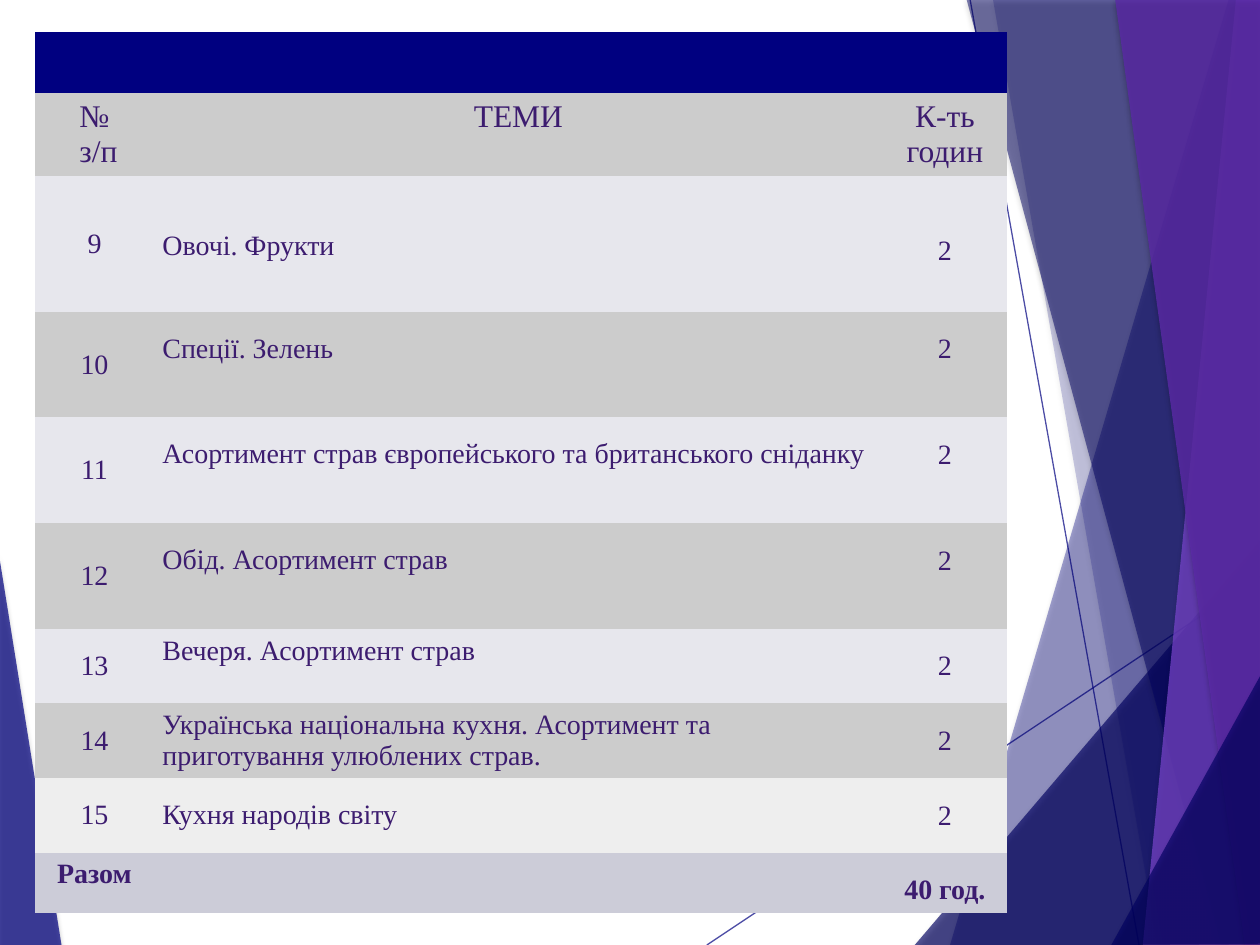
from lxml.etree import SubElement
from pptx import Presentation
from pptx.dml.color import RGBColor
from pptx.enum.shapes import MSO_CONNECTOR as Connector
from pptx.enum.text import MSO_ANCHOR as Anchor, PP_ALIGN as Align
from pptx.oxml.ns import qn
from pptx.util import Inches, Pt

FONT = "Times New Roman"
TEXT, NAVY, DARK_NAVY = "3C1C6F", "000080", "000060"
GREY, PALE, LIGHT, TOTAL = "CCCCCC", "E7E7ED", "EEEEEE", "CCCCD8"
NO_GRID_STYLE = "{2D5ABB26-0587-4C30-8999-92F81FD0307C}"

COLUMNS = [0.94, 5.79, 0.98]
ROWS = [0.49, 0.65, 1.08] + [0.84] * 3 + [0.59] * 3 + [0.48]
SIDE = 0.07

# Number, topic, row colour, top inset of the topic (None centres it)
TOPICS = [
    ("9", "Овочі. Фрукти", PALE, None),
    ("10", "Спеції. Зелень", GREY, 0.17),
    ("11", "Асортимент страв європейського та британського сніданку", PALE, 0.17),
    ("12", "Обід. Асортимент страв", GREY, 0.17),
    ("13", "Вечеря. Асортимент страв", PALE, 0.05),
    ("14", "Українська національна кухня. Асортимент та приготування "
           "улюблених страв.", GREY, None),
    ("15", "Кухня народів світу", LIGHT, None),
]

# Colour, opacity in percent, corner points
LEFT_FACET = (NAVY, 70, [(-0.01, 4.39), (0.49, 7.51), (-0.01, 7.5)])
RIGHT_FACETS = [
    (NAVY, 36, [(9.75, 0), (7.54, 7.5), (10.02, 7.51), (10.01, 0.01)]),
    (NAVY, 20, [(7.88, -0.01), (9.19, 7.5), (10.01, 7.5), (10.01, -0.01)]),
    (DARK_NAVY, 66, [(7.26, 7.5), (10, 4.29), (10.01, 7.5)]),
    (DARK_NAVY, 50, [(7.67, -0.01), (9.69, 7.5), (10.01, 7.49), (10.01, -0.01)]),
    ("7B46D0", 70, [(9.81, -0.01), (9.07, 7.5), (10.01, 7.5), (10, -0.01)]),
    ("5A2AA6", 82, [(8.85, -0.01), (9.88, 7.5), (10.02, 7.5), (10, -0.01)]),
    (DARK_NAVY, 66, [(8.82, 7.5), (10.01, 5.35), (10.02, 7.49)]),
]
LINES = [((5.61, 7.5), (10.01, 4.57)), ((7.7, 0), (9.04, 7.5))]


def paint(color_format, color):
    color_format.rgb = RGBColor.from_string(color)


def set_opacity(parent, percent):
    color = next(parent.iter(qn("a:srgbClr")))
    SubElement(color, qn("a:alpha"), val=str(percent * 1000))


def add_soft_shadow(shape):
    effects = SubElement(shape._element.spPr, qn("a:effectLst"))
    shadow = SubElement(effects, qn("a:outerShdw"), blurRad=str(Pt(3)),
                        dist=str(Pt(2)), dir="5400000", rotWithShape="0")
    SubElement(shadow, qn("a:srgbClr"), val="000000")
    set_opacity(shadow, 35)


def add_facet(page, color, opacity, corners):
    points = [(Inches(x), Inches(y)) for x, y in corners]
    builder = page.shapes.build_freeform(*points[0])
    builder.add_line_segments(points[1:], close=True)
    facet = builder.convert_to_shape()
    facet.fill.solid()
    paint(facet.fill.fore_color, color)
    set_opacity(facet._element.spPr, opacity)
    facet.line.fill.background()
    add_soft_shadow(facet)


def add_line(page, start, end):
    ends = [Inches(value) for value in start + end]
    line = page.shapes.add_connector(Connector.STRAIGHT, *ends)
    line.line.width = Pt(0.75)
    paint(line.line.color, NAVY)
    set_opacity(line._element.spPr, 70)
    SubElement(line._element.spPr, qn("a:effectLst"))


def fill_row(table, row, color):
    for cell in table.rows[row].cells:
        cell.fill.solid()
        paint(cell.fill.fore_color, color)


def write_cell(cell, *lines, size=16, bold=False, align=Align.CENTER,
               anchor=Anchor.TOP, side=0.1, top=0.05, spacing=None):
    cell.vertical_anchor = anchor
    cell.margin_left = cell.margin_right = Inches(side)
    cell.margin_top = Inches(top)
    frame = cell.text_frame
    for index, text in enumerate(lines):
        para = frame.add_paragraph() if index else frame.paragraphs[0]
        para.alignment = align
        if spacing:
            para.line_spacing = spacing
        span = para.add_run()
        span.text = text
        span.font.name = FONT
        span.font.size = Pt(size)
        span.font.bold = bold
        paint(span.font.color, TEXT)


def add_grid(page):
    box = page.shapes.add_table(
        len(ROWS), len(COLUMNS), Inches(0.28), Inches(0.25),
        Inches(sum(COLUMNS)), Inches(sum(ROWS)))
    table = box.table
    table.first_row = table.horz_banding = False
    table._tbl.tblPr.find(qn("a:tableStyleId")).text = NO_GRID_STYLE
    for column, width in zip(table.columns, COLUMNS):
        column.width = Inches(width)
    for row, height in zip(table.rows, ROWS):
        row.height = Inches(height)
    return table


def add_topics_table(page):
    table = add_grid(page)

    # Banner and column headings
    fill_row(table, 0, NAVY)
    table.cell(0, 0).merge(table.cell(0, 2))
    fill_row(table, 1, GREY)
    headings = [("№", " з/п"), ("ТЕМИ",), ("К-ть годин",)]
    for column, lines in enumerate(headings):
        write_cell(table.cell(1, column), *lines, size=18)

    # Topics, two hours each
    for row, (number, topic, color, top) in enumerate(TOPICS, start=2):
        first = row == 2
        fill_row(table, row, color)
        write_cell(table.cell(row, 0), number, anchor=Anchor.MIDDLE)
        write_cell(table.cell(row, 1), topic, align=Align.LEFT, side=SIDE,
                   anchor=Anchor.TOP if top else Anchor.MIDDLE,
                   top=top or 0.05, spacing=1.15 if first else None)
        write_cell(table.cell(row, 2), "2", side=SIDE, spacing=1.5,
                   anchor=Anchor.MIDDLE if first else Anchor.TOP)

    # Total
    last = len(ROWS) - 1
    fill_row(table, last, TOTAL)
    write_cell(table.cell(last, 0), "Разом", bold=True)
    write_cell(table.cell(last, 2), "40 год.", bold=True, side=SIDE, spacing=1.5)


def main():
    deck = Presentation()
    deck.slide_width, deck.slide_height = Inches(10), Inches(7.5)
    page = deck.slides.add_slide(deck.slide_layouts[6])

    # Background facets and lines
    add_facet(page, *LEFT_FACET)
    for start, end in LINES:
        add_line(page, start, end)
    for facet in RIGHT_FACETS:
        add_facet(page, *facet)

    add_topics_table(page)
    deck.save("out.pptx")


if __name__ == "__main__":
    main()
